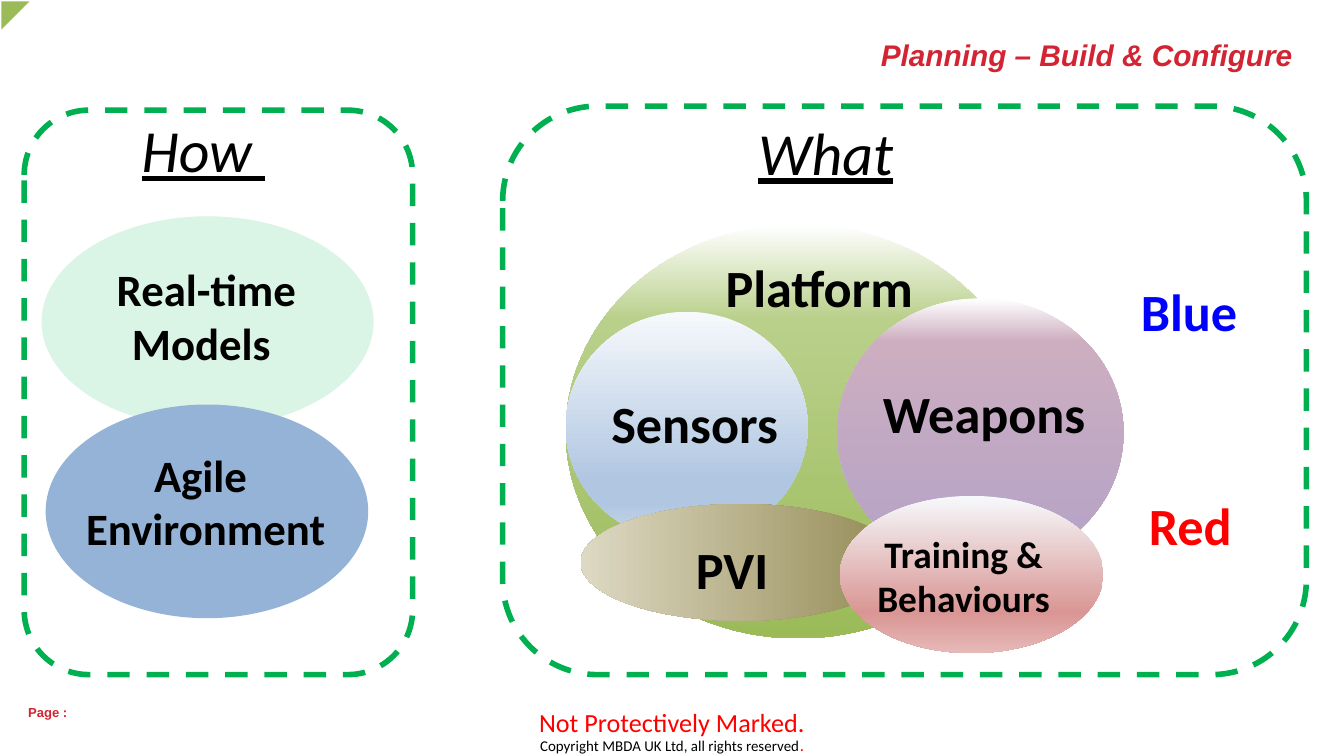
from lxml import etree
from pptx import Presentation
from pptx.dml.color import RGBColor
from pptx.enum.dml import MSO_LINE
from pptx.enum.shapes import MSO_SHAPE
from pptx.enum.text import MSO_ANCHOR, MSO_AUTO_SIZE, PP_ALIGN
from pptx.oxml.ns import qn
from pptx.util import Pt

PX = 9144
OVAL, ROUND, CORNER = MSO_SHAPE.OVAL, MSO_SHAPE.ROUNDED_RECTANGLE, MSO_SHAPE.RIGHT_TRIANGLE
LEFT, MID, RIGHT = PP_ALIGN.LEFT, PP_ALIGN.CENTER, PP_ALIGN.RIGHT
DASH = MSO_LINE.DASH
GROW = MSO_AUTO_SIZE.SHAPE_TO_FIT_TEXT
MIDDLE = MSO_ANCHOR.MIDDLE

BLACK = RGBColor(0, 0, 0)
RED = RGBColor(255, 0, 0)
BLUE = RGBColor(0, 0, 255)
CRIMSON = RGBColor(0xD2, 0x24, 0x32)
GREEN = RGBColor(0x00, 0xB0, 0x50)
OLIVE = RGBColor(0x9B, 0xBB, 0x59)
MINT = RGBColor(0xDA, 0xF4, 0xE6)
STEEL = RGBColor(0x95, 0xB3, 0xD7)
WHITE = RGBColor(255, 255, 255)
LIME = RGBColor(0xB9, 0xD0, 0x8B)
ICE = RGBColor(0xF6, 0xF9, 0xFC)
SKY = RGBColor(0xB0, 0xC6, 0xE1)
PALE = RGBColor(0xCA, 0xD9, 0xEB)
KHAKI = RGBColor(0x94, 0x8A, 0x54)
SAND = RGBColor(0xDD, 0xD9, 0xC3)
MAUVE = RGBColor(0xCD, 0xAE, 0xC0)
LILAC = RGBColor(0xB3, 0xA2, 0xC7)
ROSE = RGBColor(0xD9, 0x96, 0x94)
BLUSH = RGBColor(0xE6, 0xB9, 0xB8)

prs = Presentation()
prs.slide_width = 1000 * PX
prs.slide_height = prs.slide_width * 9 // 16
slide = prs.slides.add_slide(prs.slide_layouts[5])


def add_shape(kind, box, stops=(), turn=0):
    shape = slide.shapes.add_shape(kind, *[n * PX for n in box])
    shape.shadow.inherit = False
    shape.rotation = turn
    if len(stops) == 1:
        shape.fill.solid()
        shape.fill.fore_color.rgb = stops[0][1]
    elif stops:
        shape.fill.gradient()
        shape.fill.gradient_angle = 270
        ramp = shape.element.spPr.find(qn("a:gradFill")).find(qn("a:gsLst"))
        for stop in list(ramp):
            ramp.remove(stop)
        for pos, color in stops:
            stop = etree.SubElement(ramp, qn("a:gs"), pos=str(pos * 1000))
            etree.SubElement(stop, qn("a:srgbClr"), val=str(color))
    else:
        shape.fill.background()
    shape.line.fill.background()
    return shape


def add_text(box, lines, size, color=BLACK, bold=True, align=MID, wrap=False):
    label = slide.shapes.add_textbox(*[n * PX for n in box])
    frame = label.text_frame
    frame.text = lines
    frame.word_wrap = wrap
    frame.auto_size = GROW
    for para in frame.paragraphs:
        para.alignment = align
        font = para.font
        font.name, font.size, font.bold = "Calibri", Pt(size), bold
        font.color.rgb = color
    return frame


title = slide.shapes.title
title.left, title.top, title.width, title.height = [n * PX for n in (140, 9, 832, 63)]
title.text_frame.text = "Planning – Build & Configure"
title.text_frame.vertical_anchor = MIDDLE
para = title.text_frame.paragraphs[0]
para.alignment = RIGHT
para.font.name, para.font.size = "Arial", Pt(16)
para.font.bold = para.font.italic = True
para.font.color.rgb = CRIMSON

add_text((0, 521, 1000, 34), "Not Protectively Marked.", 14, RED, False, wrap=True)
frame = add_text((4, 542, 992, 25), "Copyright MBDA UK Ltd, all rights reserved", 8, bold=False, wrap=True)
dot = frame.paragraphs[0].add_run()
dot.text = "."
dot.font.size = Pt(9)
dot.font.color.rgb = RED
page = add_text((21, 524, 29, 12), "Page :", 7, CRIMSON, align=LEFT)
page.margin_left = page.margin_right = page.margin_top = page.margin_bottom = 0
page.paragraphs[0].font.name = "Arial"

ovals = [
    ((31, 161, 247, 157), [(0, MINT)], 0),
    ((34, 301, 240, 159), [(0, STEEL)], 0),
    ((421, 167, 346, 308), [(0, WHITE), (23, LIME), (100, OLIVE)], 0),
    ((421, 232, 180, 171), [(0, ICE), (74, SKY), (83, SKY), (100, PALE)], 0),
    ((508, 299, 87, 239), [(0, KHAKI), (100, SAND)], 90),
    ((623, 222, 213, 200), [(0, WHITE), (16, MAUVE), (100, LILAC)], 0),
    ((625, 369, 196, 117), [(0, ICE), (74, ROSE), (100, BLUSH)], 0),
]
for box, stops, turn in ovals:
    add_shape(OVAL, box, stops, turn)

labels = [
    ((530, 185, 162, 57), "Platform", BLACK),
    ((445, 286, 145, 57), "Sensors", BLACK),
    ((839, 203, 93, 57), "Blue", BLUE),
    ((845, 362, 83, 57), "Red", RED),
    ((508, 395, 75, 57), "PVI", BLACK),
    ((647, 279, 172, 57), "Weapons", BLACK),
]
for box, words, color in labels:
    add_text(box, words, 28, color, align=LEFT)
add_text((621, 390, 192, 77), "Training & Behaviours", 20, wrap=True)
add_text((76, 190, 155, 91), "Real-time\nModels ", 24)
add_text((53, 328, 200, 91), "Agile \nEnvironment", 24)

for box, words in [((91, 79, 121, 64), "How "), ((546, 81, 137, 64), "What")]:
    font = add_text(box, words, 32, bold=False).paragraphs[0].font
    font.italic = font.underline = True

for box in [(18, 82, 289, 420), (374, 79, 598, 423)]:
    line = add_shape(ROUND, box).line
    line.color.rgb = GREEN
    line.width = Pt(3)
    line.dash_style = DASH

add_shape(CORNER, (1, 1, 21, 21), [(0, OLIVE)], 90)

prs.save("out.pptx")
